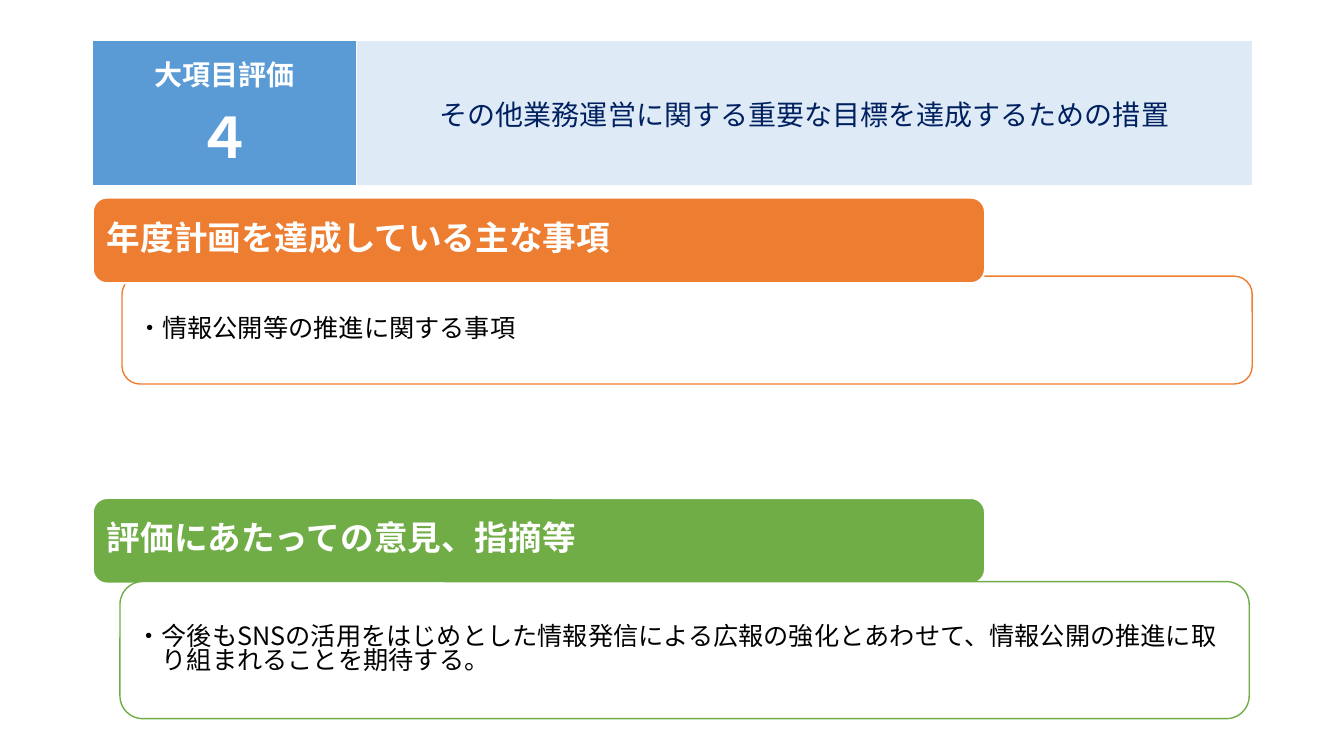
from lxml import etree
from pptx import Presentation
from pptx.dml.color import RGBColor
from pptx.enum.shapes import MSO_SHAPE
from pptx.enum.text import MSO_ANCHOR, PP_ALIGN
from pptx.oxml.ns import qn
from pptx.util import Inches, Pt

ROUNDED = MSO_SHAPE.ROUNDED_RECTANGLE
MIDDLE = MSO_ANCHOR.MIDDLE
LEFT, CENTER = PP_ALIGN.LEFT, PP_ALIGN.CENTER

WHITE = RGBColor(0xFF, 0xFF, 0xFF)
BLACK = RGBColor(0x00, 0x00, 0x00)
NAVY = RGBColor(0x00, 0x20, 0x60)
BLUE = RGBColor(0x5B, 0x9B, 0xD5)
PALE_BLUE = RGBColor(0xDE, 0xEB, 0xF7)
ORANGE = RGBColor(0xED, 0x7D, 0x31)
GREEN = RGBColor(0x70, 0xAD, 0x47)

LATIN_FONT = "Calibri"
JAPANESE_FONT = "Noto Sans CJK JP"


def format_paragraph(paragraph, size, color, bold, alignment, latin_font):
    paragraph.alignment = alignment
    for run in paragraph.runs:
        run.font.name = latin_font
        run.font.size = Pt(size)
        run.font.bold = bold
        run.font.color.rgb = color
        properties = run.font._element
        east_asian = etree.SubElement(properties, qn("a:ea"))
        east_asian.set("typeface", JAPANESE_FONT)


def add_cell_borders(cell):
    properties = cell._tc.get_or_add_tcPr()
    borders = (("a:lnL", 1), ("a:lnR", 1), ("a:lnT", 1), ("a:lnB", 3))
    for position, (tag, width) in enumerate(borders):
        line = etree.Element(qn(tag), w=str(Pt(width)))
        fill = etree.SubElement(line, qn("a:solidFill"))
        etree.SubElement(fill, qn("a:srgbClr"), val=str(WHITE))
        properties.insert(position, line)


def add_heading_table(slide, left, top, width, height):
    label_width = 2.62
    frame = slide.shapes.add_table(
        1, 2, Inches(left), Inches(top), Inches(width), Inches(height))
    table = frame.table
    table.columns[0].width = Inches(label_width)
    table.columns[1].width = Inches(width - label_width)
    contents = (
        ("大項目評価\n４", (20, 40), WHITE, True, BLUE),
        ("その他業務運営に関する重要な目標を達成するための措置",
         (20,), NAVY, False, PALE_BLUE),
    )
    for cell, (text, sizes, color, bold, fill) in zip(table.rows[0].cells, contents):
        cell.fill.solid()
        cell.fill.fore_color.rgb = fill
        cell.vertical_anchor = MIDDLE
        cell.margin_left = cell.margin_right = Inches(0.04)
        cell.margin_top = cell.margin_bottom = 0
        cell.text_frame.text = text
        for paragraph, size in zip(cell.text_frame.paragraphs, sizes):
            format_paragraph(paragraph, size, color, bold, CENTER, LATIN_FONT)
        add_cell_borders(cell)


def add_rounded_box(slide, box, fill, line, line_width, text, size, color, bold):
    shape = slide.shapes.add_shape(ROUNDED, *(Inches(length) for length in box))
    shape.shadow.inherit = False
    shape.fill.solid()
    shape.fill.fore_color.rgb = fill
    shape.line.color.rgb = line
    shape.line.width = Pt(line_width)
    text_frame = shape.text_frame
    text_frame.word_wrap = True
    text_frame.vertical_anchor = MIDDLE
    text_frame.text = text
    for paragraph in text_frame.paragraphs:
        paragraph.line_spacing = 0.82
        format_paragraph(paragraph, size, color, bold, LEFT, JAPANESE_FONT)


def add_section(slide, left, top, title, body, body_box, accent, title_in_front):
    body_left, body_top, body_width, body_height = body_box
    title_place = (left, top, 8.85, 0.85)
    body_place = (left + body_left, top + body_top, body_width, body_height)
    boxes = [
        (body_place, WHITE, accent, 1, body, 18, BLACK, False),
        (title_place, accent, WHITE, 1.5, title, 24, WHITE, True),
    ]
    for box in boxes if title_in_front else reversed(boxes):
        add_rounded_box(slide, *box)


def main():
    presentation = Presentation()
    presentation.slide_width = Inches(13.33)
    presentation.slide_height = Inches(7.5)
    slide = presentation.slides.add_slide(presentation.slide_layouts[6])
    margin = 0.92
    add_heading_table(slide, margin, 0.4, 11.5, 1.45)
    add_section(
        slide, margin, 1.96, "年度計画を達成している主な事項",
        "・情報公開等の推進に関する事項",
        (0.29, 0.78, 11.21, 1.07), ORANGE, True)
    add_section(
        slide, margin, 4.94, "評価にあたっての意見、指摘等",
        "・今後もSNSの活用をはじめとした情報発信による広報の強化とあわせて、情報公開の推進に取\n"
        "　り組まれることを期待する。",
        (0.27, 0.83, 11.2, 1.36), GREEN, False)
    presentation.save("out.pptx")


if __name__ == "__main__":
    main()
